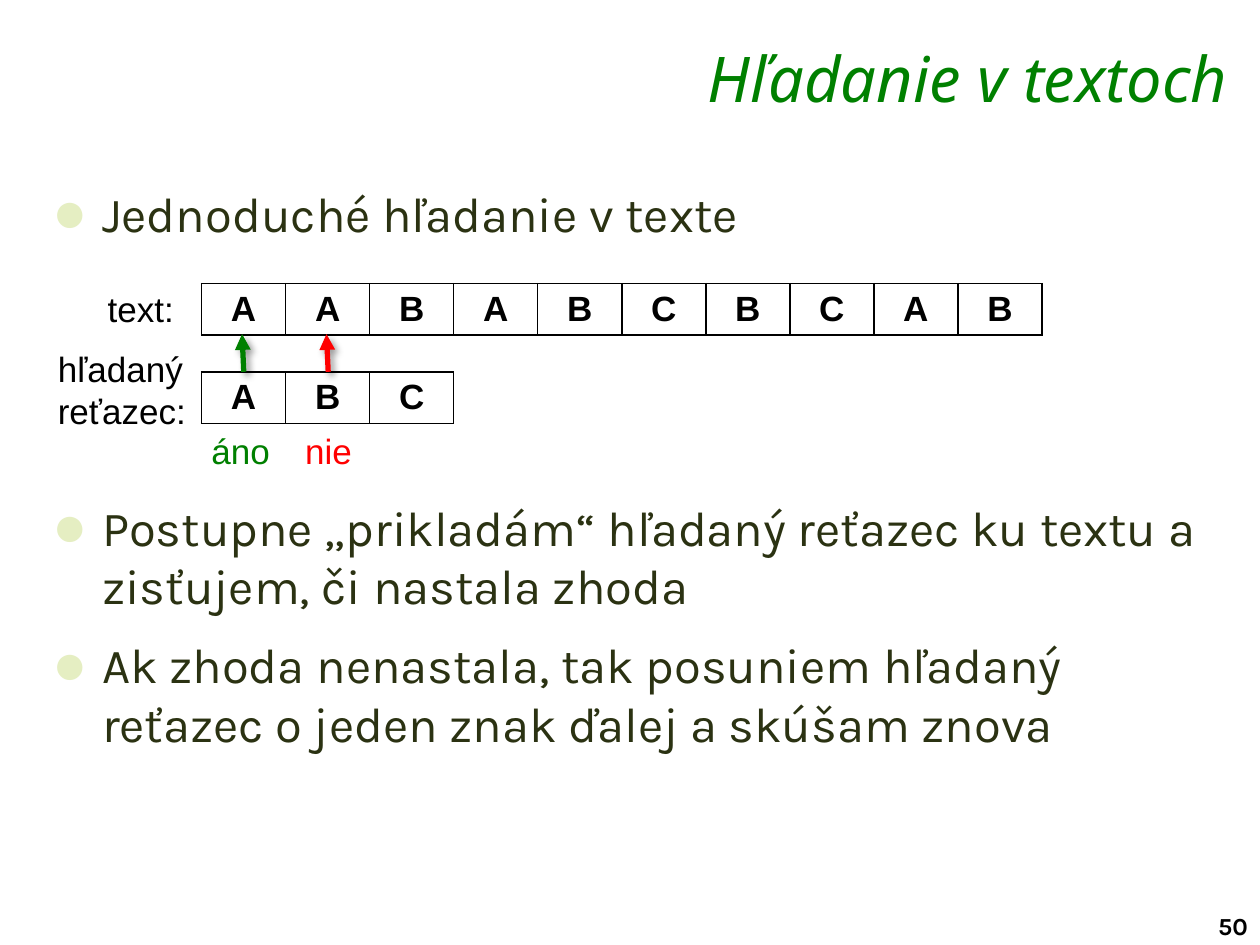
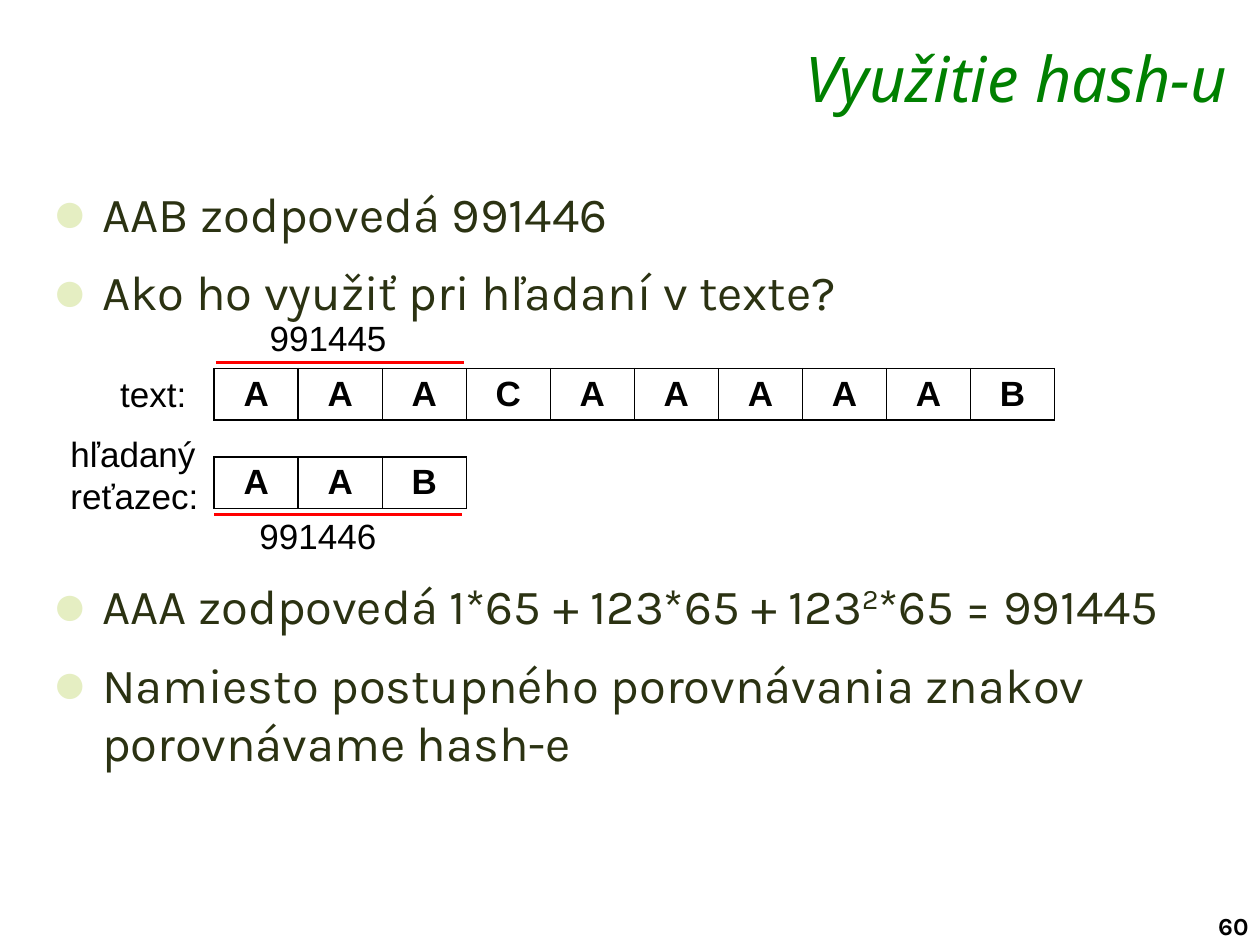
from dataclasses import dataclass

from lxml.etree import SubElement
from pptx import Presentation
from pptx.dml.color import RGBColor
from pptx.enum.shapes import MSO_CONNECTOR
from pptx.enum.text import MSO_ANCHOR, MSO_AUTO_SIZE, PP_ALIGN
from pptx.oxml import parse_xml
from pptx.oxml.ns import nsdecls, qn
from pptx.util import Inches, Pt

COLORS = {
    "title": "008000",
    "body": "2B3212",
    "bullet": "E5EEC2",
    "black": "000000",
    "white": "FFFFFF",
    "match": "008000",
    "mismatch": "FF0000",
}
TITLE_FONT, BODY_FONT, DIAGRAM_FONT = "Noto Sans", "Karla", "Arial"

SLIDE_WIDTH, SLIDE_HEIGHT = Inches(10), Inches(7.5)
COLUMN, ROW = Inches(0.67), Inches(0.41)  # one character cell
PATTERN_ROW = 1.71
RESULT_ROW = 2.71
BODY_SIZE = 28
BODY_SPACING = 5.6
DIAGRAM_SPACE = 140.3  # points left free in the list for the diagram


@dataclass
class Bullet:
    text: str  # parts between carets are superscript
    below_diagram: bool = False


@dataclass
class Label:
    """Text placed in columns and rows from the diagram's top left corner."""
    text: str
    column: float
    row: float
    columns: float
    rows: float = 1.07
    color: str = "black"


@dataclass
class Stroke:
    """Straight line between two points given in columns and rows."""
    start: tuple[float, float]
    end: tuple[float, float]
    color: str
    width: float = 2
    arrow: bool = False


@dataclass
class SearchSlide:
    number: int
    title: str
    bullets: list[Bullet]
    origin: tuple[float, float]  # share of the slide's width and height
    text: str
    pattern: str
    labels: list[Label]
    strokes: list[Stroke]


ROW_LABELS = [
    Label("text:", -1.26, -0.05, 1.1),
    Label("hľadaný\nreťazec:", -1.85, 1.12, 1.87, 1.88),
]


def comparison_arrow(column: int, color: str) -> Stroke:
    center = column + 0.5
    return Stroke((center, PATTERN_ROW), (center - 0.02, 0.98), color, 3, True)


SLIDES = [
    SearchSlide(
        50,
        "Hľadanie v textoch",
        [
            Bullet("Jednoduché hľadanie v texte"),
            Bullet("Postupne „prikladám“ hľadaný reťazec ku textu a zisťujem, "
                   "či nastala zhoda", True),
            Bullet("Ak zhoda nenastala, tak posuniem hľadaný reťazec o jeden "
                   "znak ďalej a skúšam znova"),
        ],
        (0.16, 0.3),
        "AABABCBCAB",
        "ABC",
        [
            Label("áno", -0.03, RESULT_ROW, 1, color="match"),
            Label("nie", 1.08, RESULT_ROW, 0.87, color="mismatch"),
        ],
        [comparison_arrow(0, "match"), comparison_arrow(1, "mismatch")],
    ),
    SearchSlide(
        60,
        "Využitie hash-u",
        [
            Bullet("AAB zodpovedá 991446"),
            Bullet("Ako ho využiť pri hľadaní v texte?"),
            Bullet("AAA zodpovedá 1*65 + 123*65 + 123^2^*65 = 991445", True),
            Bullet("Namiesto postupného porovnávania znakov porovnávame hash-e"),
        ],
        (0.17, 0.39),
        "AAACAAAAAB",
        "AAB",
        [
            Label("991446", 0.39, RESULT_ROW, 1.71),
            Label("991445", 0.51, -1.12, 1.71),
        ],
        [
            Stroke((0.02, -0.12), (2.96, -0.12), "mismatch"),
            Stroke((0, 2.83), (2.94, 2.83), "mismatch"),
        ],
    ),
]


def rgb(name: str) -> RGBColor:
    return RGBColor.from_string(COLORS[name])


def style(paragraph, font_name: str, size: float, color: str,
          bold: bool = False, italic: bool = False) -> None:
    font = paragraph.font
    font.name, font.size = font_name, Pt(size)
    font.bold, font.italic = bold, italic
    font.color.rgb = rgb(color)


def place(shape, left: float, top: float, width: float, height: float) -> None:
    """Place a shape by shares of the slide's size."""
    shape.left, shape.width = int(left * SLIDE_WIDTH), int(width * SLIDE_WIDTH)
    shape.top, shape.height = int(top * SLIDE_HEIGHT), int(height * SLIDE_HEIGHT)


def add_title(slide, text: str) -> None:
    title = slide.shapes.title
    place(title, 0.229, 0.041, 0.755, 0.077)
    frame = title.text_frame
    frame.text = text
    frame.auto_size = MSO_AUTO_SIZE.NONE
    frame.vertical_anchor = MSO_ANCHOR.TOP
    frame.margin_top = Inches(0.01)
    paragraph = frame.paragraphs[0]
    paragraph.alignment = PP_ALIGN.RIGHT
    style(paragraph, TITLE_FONT, 36, "title", italic=True)


def add_bullet_mark(paragraph) -> None:
    properties = paragraph._p.get_or_add_pPr()
    indent = Inches(0.39)
    properties.set("marL", str(indent))
    properties.set("indent", str(-indent))
    color = SubElement(properties, qn("a:buClr"))
    SubElement(color, qn("a:srgbClr"), val=COLORS["bullet"])
    SubElement(properties, qn("a:buSzPct"), val="120000")
    SubElement(properties, qn("a:buFont"), typeface=DIAGRAM_FONT)
    SubElement(properties, qn("a:buChar"), char="●")


def add_bullets(slide, bullets: list[Bullet]) -> None:
    body = slide.placeholders[1]
    place(body, 0.032, 0.187, 0.938, 0.773)
    frame = body.text_frame
    frame.auto_size = MSO_AUTO_SIZE.NONE
    frame.vertical_anchor = MSO_ANCHOR.TOP
    for index, bullet in enumerate(bullets):
        paragraph = frame.add_paragraph() if index else frame.paragraphs[0]
        add_bullet_mark(paragraph)
        before = DIAGRAM_SPACE if bullet.below_diagram else BODY_SPACING
        paragraph.space_before = Pt(before if index else 0)
        paragraph.space_after = Pt(BODY_SPACING)
        style(paragraph, BODY_FONT, BODY_SIZE, "body")
        for part_index, part in enumerate(bullet.text.split("^")):
            run = paragraph.add_run()
            run.text = part
            if part_index % 2:
                run._r.get_or_add_rPr().set("baseline", "30000")


def add_number(slide, number: int) -> None:
    box = slide.shapes.add_textbox(0, 0, 0, 0)
    place(box, 0.957, 0.957, 0.051, 0.044)
    box.text_frame.word_wrap = True
    box.text_frame.text = str(number)
    style(box.text_frame.paragraphs[0], BODY_FONT, 14, "black", bold=True)


def add_cell_borders(cell) -> None:
    properties = cell._tc.get_or_add_tcPr()
    for index, side in enumerate(("lnL", "lnR", "lnT", "lnB")):
        properties.insert(index, parse_xml(
            f'<a:{side} {nsdecls("a")} w="{Pt(1)}"><a:solidFill>'
            f'<a:srgbClr val="{COLORS["black"]}"/></a:solidFill></a:{side}>'))


def add_characters(slide, characters: str, left: int, top: int) -> None:
    """Draw a string as a one-row table with a character in each cell."""
    count = len(characters)
    table = slide.shapes.add_table(1, count, left, top, count * COLUMN, ROW).table
    table.first_row = table.horz_banding = False
    for index, character in enumerate(characters):
        table.columns[index].width = Inches(6.67 / 10)
        cell = table.cell(0, index)
        cell.text = character
        cell.fill.solid()
        cell.fill.fore_color.rgb = rgb("white")
        cell.margin_top = cell.margin_bottom = Inches(0.03)
        cell.vertical_anchor = MSO_ANCHOR.MIDDLE
        paragraph = cell.text_frame.paragraphs[0]
        paragraph.alignment = PP_ALIGN.CENTER
        style(paragraph, DIAGRAM_FONT, 20, "black", bold=True)
        add_cell_borders(cell)


def add_label(slide, label: Label, left: int, top: int) -> None:
    box = slide.shapes.add_textbox(
        left + int(label.column * COLUMN), top + int(label.row * ROW),
        int(label.columns * COLUMN), int(label.rows * ROW))
    frame = box.text_frame
    frame.word_wrap = False
    frame.text = label.text
    for paragraph in frame.paragraphs:
        style(paragraph, DIAGRAM_FONT, 20, label.color)


def add_stroke(slide, stroke: Stroke, left: int, top: int) -> None:
    (start_x, start_y), (end_x, end_y) = stroke.start, stroke.end
    connector = slide.shapes.add_connector(
        MSO_CONNECTOR.STRAIGHT,
        left + int(start_x * COLUMN), top + int(start_y * ROW),
        left + int(end_x * COLUMN), top + int(end_y * ROW))
    connector.line.color.rgb = rgb(stroke.color)
    connector.line.width = Pt(stroke.width)
    effects = SubElement(connector._element.spPr, qn("a:effectLst"))
    if stroke.arrow:
        SubElement(connector.line._get_or_add_ln(), qn("a:tailEnd"), type="triangle")
        shadow = SubElement(effects, qn("a:outerShdw"), blurRad=str(Pt(4)),
                            dist=str(Pt(3)), dir="2700000")
        color = SubElement(shadow, qn("a:srgbClr"), val=COLORS["black"])
        SubElement(color, qn("a:alpha"), val="40000")


def add_search_slide(presentation, content: SearchSlide) -> None:
    slide = presentation.slides.add_slide(presentation.slide_layouts[1])
    add_number(slide, content.number)
    add_title(slide, content.title)
    add_bullets(slide, content.bullets)
    left = int(content.origin[0] * SLIDE_WIDTH)
    top = int(content.origin[1] * SLIDE_HEIGHT)
    add_characters(slide, content.text, left, top)
    add_characters(slide, content.pattern, left, top + int(PATTERN_ROW * ROW))
    for label in ROW_LABELS + content.labels:
        add_label(slide, label, left, top)
    for stroke in content.strokes:
        add_stroke(slide, stroke, left, top)


def main() -> None:
    presentation = Presentation()
    presentation.slide_width, presentation.slide_height = SLIDE_WIDTH, SLIDE_HEIGHT
    for content in SLIDES:
        add_search_slide(presentation, content)
    presentation.save("out.pptx")


if __name__ == "__main__":
    main()
